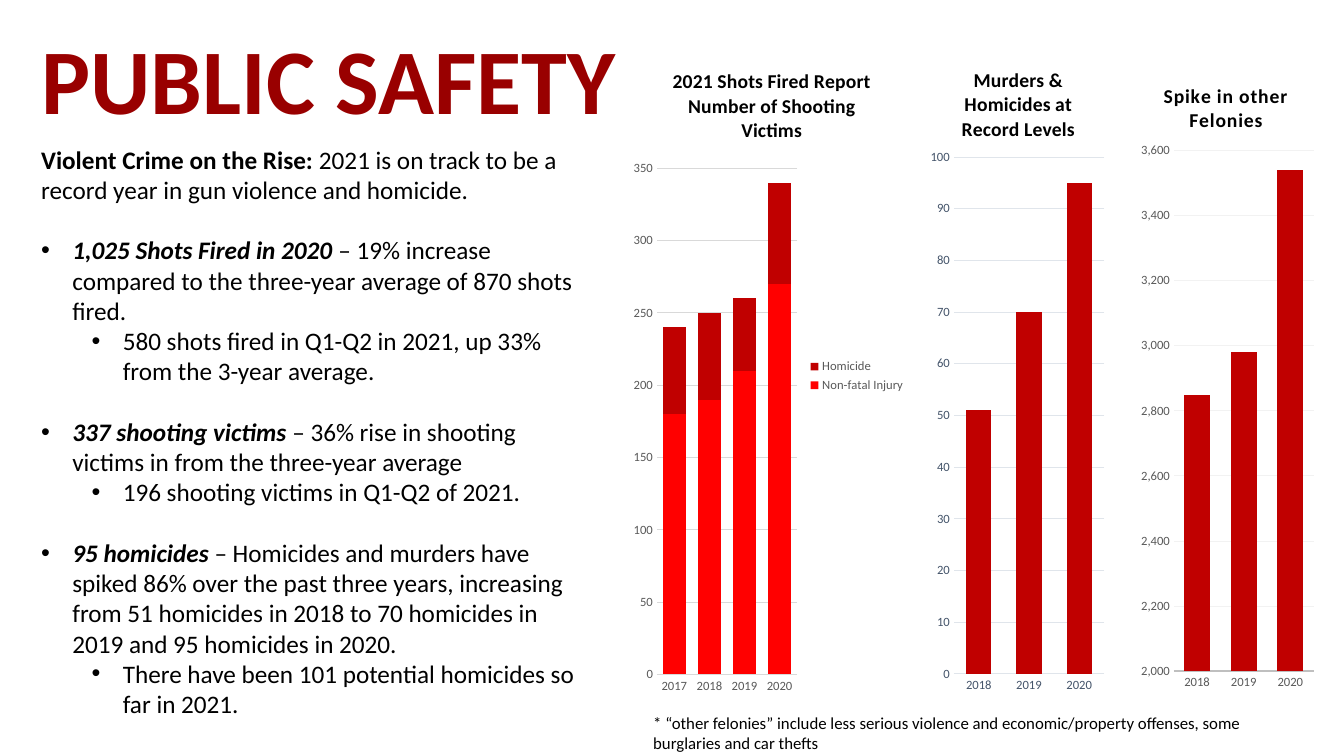
"""Build the public safety slide with its text and three crime charts."""
from lxml import etree
from pptx import Presentation
from pptx import util as u
from pptx.chart.data import CategoryChartData
from pptx.dml.color import RGBColor
from pptx.enum import chart as ch, text as tx
from pptx.oxml import parse_xml
from pptx.oxml.ns import nsdecls, qn

BLACK = RGBColor(0, 0, 0)
MAROON = RGBColor(0x99, 0, 0)
CRIMSON = RGBColor(0xC0, 0, 0)
RED = RGBColor(0xFF, 0, 0)
GRAY = RGBColor(0x59, 0x59, 0x59)
SLATE = RGBColor(0x44, 0x54, 0x6A)
SILVER = RGBColor(0xD9, 0xD9, 0xD9)
MIST = RGBColor(0xE0, 0xE5, 0xEB)
PALE = RGBColor(0xF2, 0xF2, 0xF2)
STEEL = RGBColor(0xBF, 0xBF, 0xBF)


def style(font, size, color, bold=False):
    font.name, font.size, font.bold = "Calibri", u.Pt(size), bold
    font.color.rgb = color


def add_box(left, top, width, height):
    box = slide.shapes.add_textbox(*map(u.Inches, (left, top, width, height)))
    box.text_frame.word_wrap = True
    return box.text_frame


deck = Presentation()
deck.slide_width, deck.slide_height = u.Inches(13.33), u.Inches(7.5)
slide = deck.slides.add_slide(deck.slide_layouts[5])

title = slide.shapes.title
title.left, title.top = u.Inches(0.31), u.Inches(0.17)
title.width, title.height = u.Inches(12.33), u.Inches(1.21)
frame = title.text_frame
frame.text = "PUBLIC SAFETY"
frame.auto_size = tx.MSO_AUTO_SIZE.NONE
frame.vertical_anchor = tx.MSO_ANCHOR.TOP
frame.paragraphs[0].alignment = tx.PP_ALIGN.LEFT
style(frame.paragraphs[0].font, 66, MAROON, True)

points = [
    (None, "Violent Crime on the Rise: ",
     "2021 is on track to be a record year in gun violence and homicide."),
    (0, "1,025 Shots Fired in 2020 ",
     "– 19% increase compared to the three-year average of 870 shots fired."),
    (1, "", "580 shots fired in Q1-Q2 in 2021, up 33% from the 3-year average."),
    (0, "337 shooting victims",
     " – 36% rise in shooting victims in from the three-year average"),
    (1, "", "196 shooting victims in Q1-Q2 of 2021."),
    (0, "95 homicides ",
     "– Homicides and murders have spiked 86% over the past three years, "
     "increasing from 51 homicides in 2018 to 70 homicides in 2019 and "
     "95 homicides in 2020."),
    (1, "", "There have been 101 potential homicides so far in 2021."),
]
body = add_box(0.31, 1.38, 5.57, 5.95)
for i, (level, lead, rest) in enumerate(points):
    para = body.add_paragraph() if i else body.paragraphs[0]
    if level is not None:
        para.level = level
        props = para._p.get_or_add_pPr()
        props.set("marL", str(u.Inches(0.31 + 0.5 * level)))
        props.set("indent", str(u.Inches(-0.31)))
        etree.SubElement(props, qn("a:buFont")).set("typeface", "Arial")
        etree.SubElement(props, qn("a:buChar")).set("char", "•")
    if level == 0:
        para.space_before = u.Pt(21.6)
    style(para.font, 18, BLACK)
    if lead:
        run = para.add_run()
        run.text, run.font.bold = lead, True
        run.font.italic = level == 0
    para.add_run().text = rest

stack = ch.XL_CHART_TYPE.COLUMN_STACKED
group = ch.XL_CHART_TYPE.COLUMN_CLUSTERED
charts = [
    dict(kind=stack, at=(6.23, 0.46, 2.85, 6.54), plot=(0.1, 0.185, 0.488, 0.768),
         title=["2021 Shots Fired Report", "Number of Shooting Victims"], space=0,
         years=["2017", "2018", "2019", "2020"], gap=55, lap=100,
         series=[("Non-fatal Injury", (180, 190, 210, 270), RED),
                 ("Homicide", (60, 60, 50, 70), CRIMSON)],
         scale=(0, 350, 50), ink=GRAY, grid=SILVER, base=SILVER, thick=0.75),
    dict(kind=group, at=(9.08, 0.44, 2.04, 6.54), plot=(0.186, 0.171, 0.732, 0.784),
         title=["Murders & Homicides at Record Levels"], space=0,
         years=["2018", "2019", "2020"], gap=100, lap=-24,
         series=[("Series 1", (51, 70, 95), CRIMSON)],
         scale=(0, 100, 10), ink=SLATE, grid=MIST, base=MIST, thick=0.75),
    dict(kind=group, at=(11.14, 0.6, 2.04, 6.38), plot=(0.246, 0.14, 0.68, 0.81),
         title=["Spike in other Felonies"], space=50,
         years=["2018", "2019", "2020"], gap=80, lap=25,
         series=[("Series 1", (2850, 2980, 3540), CRIMSON)],
         scale=(2000, 3600, 200), ink=GRAY, grid=PALE, base=STEEL, thick=1.25),
]
for c in charts:
    data = CategoryChartData()
    data.categories = c["years"]
    for name, vals, color in c["series"]:
        data.add_series(name, vals)
    chart = slide.shapes.add_chart(c["kind"], *map(u.Inches, c["at"]), data).chart
    style(chart.font, 10, BLACK)

    head = chart.chart_title.text_frame
    for i, line in enumerate(c["title"]):
        para = head.add_paragraph() if i else head.paragraphs[0]
        run = para.add_run()
        run.text = line
        style(run.font, 14, BLACK, True)
        run.font._element.set("spc", str(c["space"]))
    chart.chart_title.include_in_layout = False

    bars = chart.plots[0]
    bars.gap_width, bars.overlap = c["gap"], c["lap"]
    bars.vary_by_categories = False
    for item, (name, vals, color) in zip(bars.series, c["series"]):
        item.format.fill.solid()
        item.format.fill.fore_color.rgb = color
        item.invert_if_negative = False

    years, count = chart.category_axis, chart.value_axis
    for axis in (years, count):
        axis.major_tick_mark = axis.minor_tick_mark = ch.XL_TICK_MARK.NONE
        style(axis.tick_labels.font, 9, c["ink"])
    years.format.line.color.rgb = c["base"]
    years.format.line.width = u.Pt(c["thick"])
    count.format.line.fill.background()
    count.minimum_scale, count.maximum_scale, count.major_unit = c["scale"]
    count.tick_labels.number_format = "#,##0"
    count.tick_labels.number_format_is_linked = False
    count.major_gridlines.format.line.color.rgb = c["grid"]
    count.major_gridlines.format.line.width = u.Pt(0.75)

    chart.has_legend = len(c["series"]) > 1
    if chart.has_legend:
        chart.legend.position = ch.XL_LEGEND_POSITION.RIGHT
        chart.legend.include_in_layout = False
        style(chart.legend.font, 9, c["ink"])

    area = chart._chartSpace.chart.plotArea
    for old in area.findall(qn("c:layout")):
        area.remove(old)
    rules = [("layoutTarget", "inner"), ("xMode", "edge"), ("yMode", "edge")]
    rules += zip("xywh", c["plot"])
    parts = "".join(f'<c:{tag} val="{val}"/>' for tag, val in rules)
    area.insert(0, parse_xml(
        f'<c:layout {nsdecls("c")}><c:manualLayout>{parts}</c:manualLayout></c:layout>'))

note = add_box(6.38, 7.02, 6.52, 0.48)
note.text = ("* “other felonies” include less serious violence and "
             "economic/property offenses, some burglaries and car thefts")
style(note.paragraphs[0].font, 12, BLACK)

deck.save("out.pptx")
